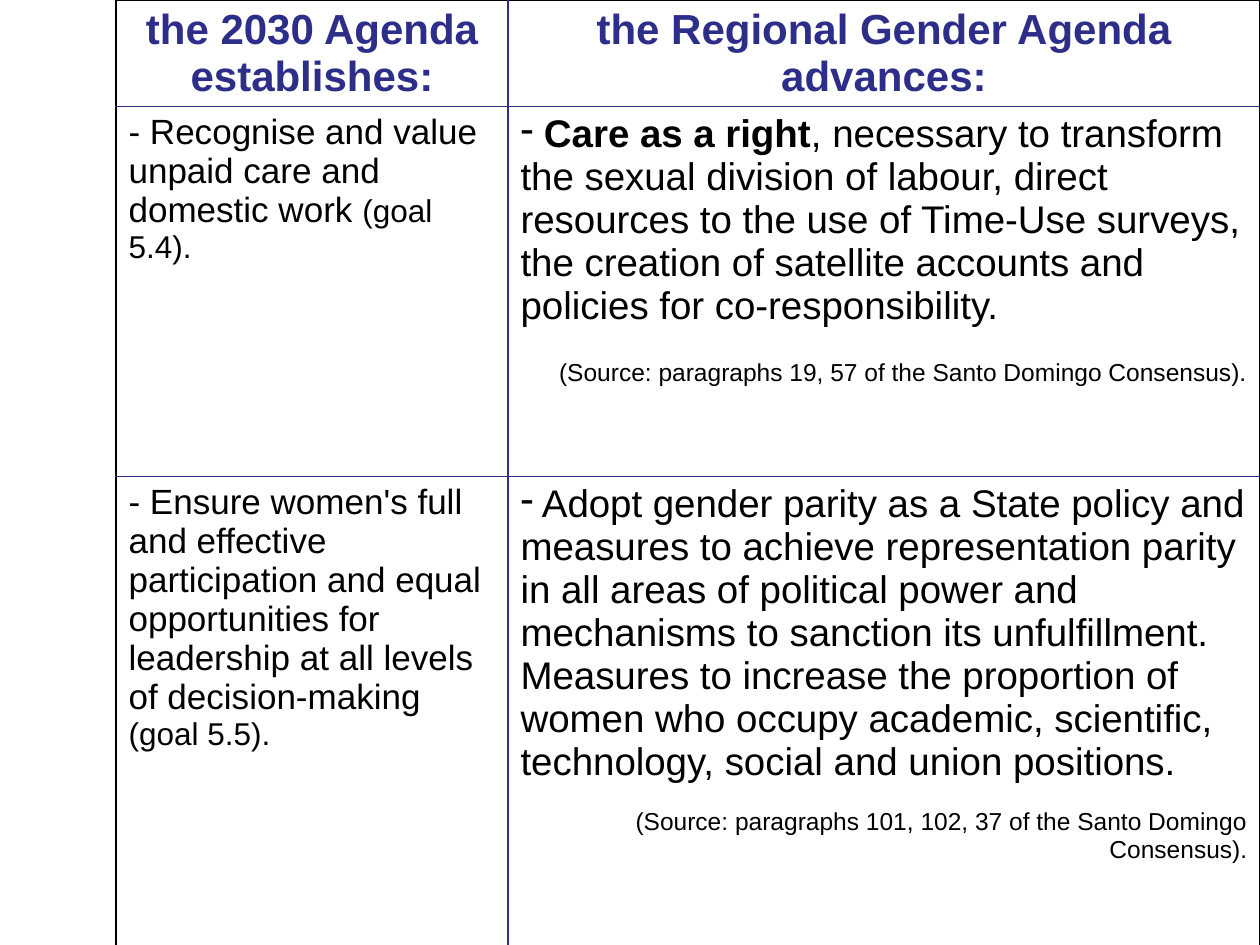
from lxml import etree
from pptx import Presentation
from pptx.dml.color import RGBColor
from pptx.enum.text import MSO_ANCHOR, PP_ALIGN
from pptx.oxml.ns import qn
from pptx.util import Pt

PX = 914400 // 126
CENTER, RIGHT = PP_ALIGN.CENTER, PP_ALIGN.RIGHT
MIDDLE = MSO_ANCHOR.MIDDLE
BLACK = RGBColor(0x00, 0x00, 0x00)
NAVY = RGBColor(0x2D, 0x2D, 0x8A)
WHITE = RGBColor(0xFF, 0xFF, 0xFF)

TABLE_BOX = (116, 0, 1144, 945)
COL_WIDTHS = (392, 752)
ROW_HEIGHTS = (101, 370, 474)

HEADINGS = ("the 2030 Agenda establishes:", "the Regional Gender Agenda advances:")
# Each row: goal text, goal reference, advance runs (text, bold), source, gap in points
ROWS = (
    ("- Recognise and value unpaid care and domestic work ", "(goal 5.4).",
     ((" Care as a right", True),
      (", necessary to transform the sexual division of labour, direct resources "
       "to the use of Time-Use surveys, the creation of satellite accounts and "
       "policies for co-responsibility.", False)),
     "(Source: paragraphs 19, 57 of the Santo Domingo Consensus).", 18),
    ("- Ensure women's full and effective participation and equal opportunities "
     "for leadership at all levels of decision-making ", "(goal 5.5).",
     ((" Adopt gender parity as a State policy and measures to achieve "
       "representation parity in all areas of political power and mechanisms to "
       "sanction its unfulfillment. Measures to increase the proportion of women "
       "who occupy academic, scientific, technology, social and union positions.",
       False),),
     "(Source: paragraphs 101, 102, 37 of the Santo Domingo Consensus).", 14),
)


def style_cell(cell, borders):
    """Give the cell a white fill and 1 pt borders, coloured by side."""
    tc_pr = cell._tc.get_or_add_tcPr()
    for side in "LRTB":
        ln = etree.SubElement(tc_pr, qn(f"a:ln{side}"), w=str(Pt(1)))
        fill = etree.SubElement(ln, qn("a:solidFill"))
        etree.SubElement(fill, qn("a:srgbClr"), val=str(borders[side]))
    cell.fill.solid()
    cell.fill.fore_color.rgb = WHITE


def set_font(p, size, color=BLACK, bold=False):
    p.font.name = "Arial"
    p.font.size = Pt(size)
    p.font.bold = bold
    p.font.color.rgb = color


def add_run(p, text):
    r = p.add_run()
    r.text = text
    return r


def add_dash_bullet(p):
    p_pr = p._p.get_or_add_pPr()
    p_pr.set("marL", "0")
    p_pr.set("indent", "0")
    etree.SubElement(p_pr, qn("a:buChar"), char="-")


def fill_heading(cell, text):
    cell.vertical_anchor = MIDDLE
    p = cell.text_frame.paragraphs[0]
    p.alignment = CENTER
    set_font(p, 24, NAVY, True)
    add_run(p, text)


def fill_goal(cell, text, reference):
    p = cell.text_frame.paragraphs[0]
    set_font(p, 20)
    add_run(p, text)
    add_run(p, reference).font.size = Pt(18)


def fill_advance(cell, runs, source, gap):
    tf = cell.text_frame
    p = tf.paragraphs[0]
    add_dash_bullet(p)
    set_font(p, 22)
    for text, bold in runs:
        add_run(p, text).font.bold = bold
    p = tf.add_paragraph()
    p.alignment = RIGHT
    p.space_before = Pt(gap)
    set_font(p, 14)
    add_run(p, source)


def add_agenda_table(slide, box):
    left, top, width, height = (n * PX for n in box)
    table = slide.shapes.add_table(
        len(ROW_HEIGHTS), len(COL_WIDTHS), left, top, width, height).table
    table.first_row = table.horz_banding = False
    for column, w in zip(table.columns, COL_WIDTHS):
        column.width = w * PX
    for i, (row, h) in enumerate(zip(table.rows, ROW_HEIGHTS)):
        row.height = h * PX
        for j, cell in enumerate(row.cells):
            style_cell(cell, {"L": NAVY if j else BLACK, "R": BLACK if j else NAVY,
                              "T": NAVY if i else BLACK, "B": NAVY})
    for j, text in enumerate(HEADINGS):
        fill_heading(table.cell(0, j), text)
    for i, (goal, reference, runs, source, gap) in enumerate(ROWS, 1):
        fill_goal(table.cell(i, 0), goal, reference)
        fill_advance(table.cell(i, 1), runs, source, gap)


def main():
    prs = Presentation()
    prs.slide_width, prs.slide_height = 1260 * PX, 945 * PX
    slide = prs.slides.add_slide(prs.slide_layouts[6])
    add_agenda_table(slide, TABLE_BOX)
    prs.save("out.pptx")


if __name__ == "__main__":
    main()
